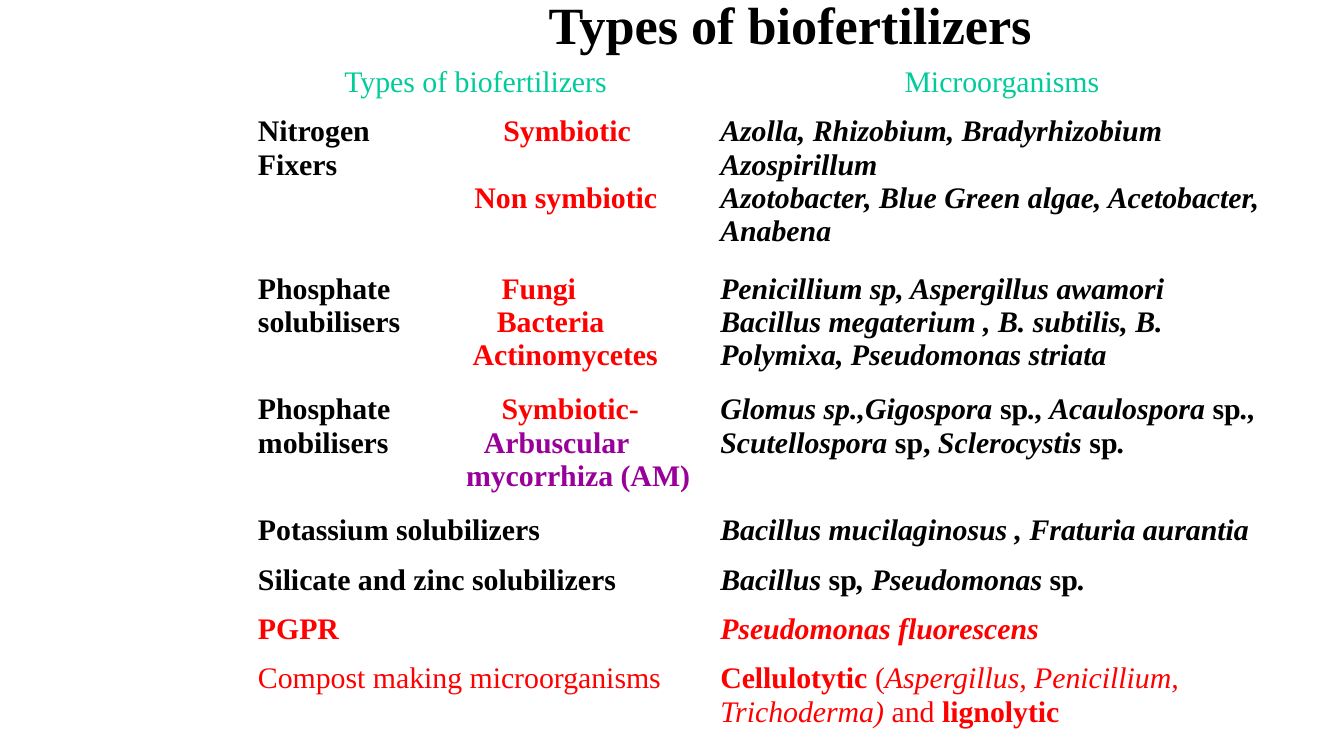
from lxml import etree
from pptx import Presentation
from pptx.dml.color import RGBColor
from pptx.enum.text import MSO_ANCHOR, PP_ALIGN
from pptx.oxml.ns import qn
from pptx.util import Pt

CENTER, LEFT = PP_ALIGN.CENTER, PP_ALIGN.LEFT
MIDDLE = MSO_ANCHOR.MIDDLE
FONT = "Times New Roman"
COLORS = {"black": "000000", "red": "FF0000", "purple": "990099",
          "green": "00CC99", "white": "FFFFFF"}

# Content: a cell is a list of lines, a line a list of (text, color, style) spans;
# style letters are b for bold and i for italic
TITLE = "Types of biofertilizers"
HEADERS = ["Types of biofertilizers", "Microorganisms"]


def label(text, color="black", style="b"):
    return [(text, color, style)]


def grouped(name, kind, tab, color="red"):
    """A line with a group name, then a kind at a tab stop."""
    return [(name, "black", "b"), ("\t" + kind, color, "b", tab)]


def species(*parts):
    """Bold line whose parts alternate between italic and upright."""
    return [(part, "black", "b" if i % 2 else "bi") for i, part in enumerate(parts)]


# Row height, left cell, right cell
ROWS = [
    (84.2,
     [grouped("Nitrogen", "Symbiotic", 131.5), label("Fixers"),
      grouped("", "Non symbiotic", 116)],
     [species("Azolla, Rhizobium, Bradyrhizobium"), species("Azospirillum"),
      species("Azotobacter, Blue Green algae, Acetobacter, Anabena")]),
    (64.8,
     [grouped("Phosphate", "Fungi", 130.5), grouped("solubilisers", "Bacteria", 128),
      grouped("", "Actinomycetes", 115)],
     [species("Penicillium sp, Aspergillus awamori"),
      species("Bacillus megaterium , B. subtilis, B. Polymixa, Pseudomonas striata")]),
    (64.8,
     [grouped("Phosphate", "Symbiotic-", 130.5),
      grouped("mobilisers", "Arbuscular", 121, "purple"),
      grouped("", "mycorrhiza (AM)", 111.5, "purple")],
     [species("Glomus sp.,Gigospora ", "sp", "., Acaulospora ", "sp",
              "., Scutellospora ", "sp, ", "Sclerocystis ", "sp", ".")]),
    (26.2, [label("Potassium solubilizers")],
     [species("Bacillus mucilaginosus , Fraturia aurantia")]),
    (26.2, [label("Silicate and zinc solubilizers")],
     [species("Bacillus ", "sp", ", Pseudomonas ", "sp", ".")]),
    (26.2, [label("PGPR", "red")], [label("Pseudomonas fluorescens", "red", "bi")]),
    (45.5, [label("Compost making microorganisms", "red", "")],
     [[("Cellulotytic ", "red", "b"), ("(", "red", ""),
       ("Aspergillus, Penicillium, Trichoderma) ", "red", "i"),
       ("and ", "red", ""), ("lignolytic", "red", "b")]]),
]
HEADER_HEIGHT = 26.2
COLUMN_WIDTHS = [247.7, 316.1]
TABLE_LEFT, TABLE_TOP = 131, 31.7


def rgb(name):
    return RGBColor.from_string(COLORS[name])


def add_tab_stop(para, position):
    stops = etree.SubElement(para._p.get_or_add_pPr(), qn("a:tabLst"))
    etree.SubElement(stops, qn("a:tab"), pos=str(int(Pt(position))), algn="l")


def write_line(para, spans, align):
    para.alignment = align
    for span in spans:
        if len(span) == 4:
            add_tab_stop(para, span[3])
    para.font.name, para.font.size = FONT, Pt(16)
    for text, color, style, *_ in spans:
        if text:
            run = para.add_run()
            run.text = text
            run.font.name, run.font.size = FONT, Pt(16)
            run.font.bold, run.font.italic = "b" in style, "i" in style
            run.font.color.rgb = rgb(color)


def fill_cell(cell, lines, align=LEFT, bottom_width=1):
    frame = cell.text_frame
    for i, spans in enumerate(lines):
        para = frame.add_paragraph() if i else frame.paragraphs[0]
        write_line(para, spans, align)
    # Borders come before the fill in the cell properties
    properties = cell._tc.get_or_add_tcPr()
    for side, width in (("L", 1), ("R", 1), ("T", 1), ("B", bottom_width)):
        border = etree.SubElement(properties, qn("a:ln" + side), w=str(int(Pt(width))))
        solid = etree.SubElement(border, qn("a:solidFill"))
        etree.SubElement(solid, qn("a:srgbClr"), val=COLORS["white"])
    cell.fill.solid()
    cell.fill.fore_color.rgb = rgb("white")


deck = Presentation()
deck.slide_width, deck.slide_height = Pt(720), Pt(405)
page = deck.slides.add_slide(deck.slide_layouts[6])

# Title
box = page.shapes.add_textbox(Pt(246.2), Pt(0), Pt(354.2), Pt(28.8))
frame = box.text_frame
frame.word_wrap = True
frame.vertical_anchor = MIDDLE
frame.margin_left = frame.margin_right = frame.margin_top = frame.margin_bottom = 0
para = frame.paragraphs[0]
para.text = TITLE
para.alignment = CENTER
para.line_spacing = 0.93
para.font.name, para.font.size, para.font.bold = FONT, Pt(28), True
para.font.color.rgb = rgb("black")

# Table
heights = [HEADER_HEIGHT] + [row[0] for row in ROWS]
table = page.shapes.add_table(
    len(heights), len(COLUMN_WIDTHS), Pt(TABLE_LEFT), Pt(TABLE_TOP),
    Pt(sum(COLUMN_WIDTHS)), Pt(sum(heights))).table
for column, width in zip(table.columns, COLUMN_WIDTHS):
    column.width = Pt(width)
for row, height in zip(table.rows, heights):
    row.height = Pt(height)
for c, header in enumerate(HEADERS):
    fill_cell(table.cell(0, c), [label(header, "green", "")], CENTER, 3)
for r, (_, *cells) in enumerate(ROWS, start=1):
    for c, lines in enumerate(cells):
        fill_cell(table.cell(r, c), lines)

deck.save("out.pptx")
